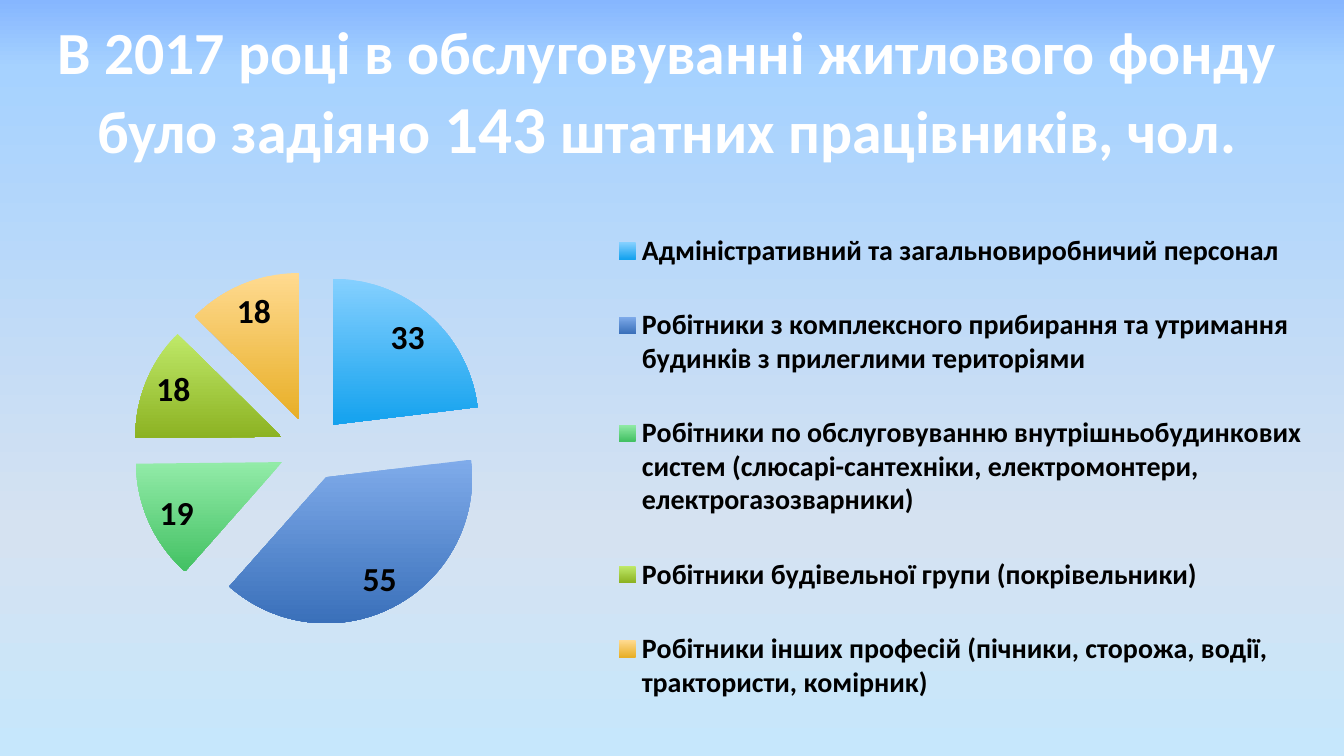
from copy import deepcopy

from pptx import Presentation
from pptx.chart.data import CategoryChartData
from pptx.dml.color import RGBColor
from pptx.enum.chart import XL_CHART_TYPE, XL_LABEL_POSITION, XL_LEGEND_POSITION
from pptx.enum.text import MSO_ANCHOR, PP_ALIGN
from pptx.oxml import parse_xml
from pptx.oxml.ns import nsdecls, qn
from pptx.util import Inches, Pt

PIE = XL_CHART_TYPE.PIE
RIGHT = XL_LEGEND_POSITION.RIGHT
BEST = XL_LABEL_POSITION.BEST_FIT
TOP = MSO_ANCHOR.TOP
CENTER = PP_ALIGN.CENTER

WHITE = RGBColor(0xFF, 0xFF, 0xFF)
BLACK = RGBColor(0, 0, 0)
SKY = [
    (0, RGBColor(0x86, 0xB6, 0xFF)),
    (0.09, RGBColor(0xA6, 0xD2, 0xFF)),
    (0.7, RGBColor(0xD5, 0xE2, 0xF1)),
    (1, RGBColor(0xC6, 0xE7, 0xFC)),
]
AZURE = RGBColor(0x85, 0xD0, 0xFF), RGBColor(0x14, 0xA2, 0xEE)
BLUE = RGBColor(0x7F, 0xAB, 0xEA), RGBColor(0x3A, 0x70, 0xBA)
GREEN = RGBColor(0x92, 0xEB, 0xA8), RGBColor(0x43, 0xC1, 0x63)
LIME = RGBColor(0xBF, 0xE9, 0x69), RGBColor(0x8C, 0xB2, 0x22)
GOLD = RGBColor(0xFF, 0xDA, 0x90), RGBColor(0xE8, 0xAF, 0x27)

STAFF = [
    ("Адміністративний та загальновиробничий персонал", 33, AZURE),
    ("Робітники з комплексного прибирання та утримання будинків "
     "з прилеглими територіями", 55, BLUE),
    ("Робітники по обслуговуванню внутрішньобудинкових систем "
     "(слюсарі-сантехніки, електромонтери, електрогазозварники)", 19, GREEN),
    ("Робітники будівельної групи (покрівельники)", 18, LIME),
    ("Робітники інших професій (пічники, сторожа, водії, "
     "трактористи, комірник)", 18, GOLD),
]


def style(font, size, color=BLACK, bold=True):
    """Set the look of a font."""
    font.name = "Calibri"
    font.size = Pt(size)
    font.bold = bold
    font.color.rgb = color


def write(para, text, **look):
    """Add a run of text with its format."""
    run = para.add_run()
    run.text = text
    style(run.font, **look)


def shade(fill, stops):
    """Colour a gradient from top to bottom through the given stops."""
    fill.gradient_angle = 270
    for stop, (place, color) in zip(fill.gradient_stops, stops):
        stop.position = place
        stop.color.rgb = color


def paint(slide):
    """Give the slide its sky gradient."""
    fill = slide.background.fill
    fill.gradient()
    group = slide.element.find(".//" + qn("a:gsLst"))
    for _ in SKY[2:]:
        group.append(deepcopy(group[0]))
    shade(fill, SKY)


def layout(x, y, w, h, inner=False):
    """Make a manual layout from fractions of the chart."""
    target = '<c:layoutTarget val="inner"/>' if inner else ""
    sizes = "".join(f'<c:{key} val="{val}"/>'
                    for key, val in zip("xywh", (x, y, w, h)))
    return parse_xml(
        f'<c:layout {nsdecls("c")}><c:manualLayout>{target}'
        f'<c:xMode val="edge"/><c:yMode val="edge"/>{sizes}'
        "</c:manualLayout></c:layout>")


def fix(node, spot, index):
    """Put a manual layout into a chart part."""
    for old in node.findall(qn("c:layout")):
        node.remove(old)
    node.insert(index, spot)


def head(slide):
    """Write the slide title."""
    title = slide.shapes.title
    title.left, title.top = Inches(0.12), Inches(0.06)
    title.width, title.height = Inches(9.69), Inches(1.03)
    frame = title.text_frame
    frame.word_wrap = True
    frame.vertical_anchor = TOP
    para = frame.paragraphs[0]
    para.alignment = CENTER
    write(para, "В 2017 році в обслуговуванні житлового фонду було задіяно ",
          size=32, color=WHITE)
    write(para, "143", size=36, color=WHITE)
    write(para, " штатних працівників, чол.", size=32, color=WHITE)


def graph(slide):
    """Draw the pie of staff groups."""
    data = CategoryChartData(number_format="0")
    data.categories = [name for name, _, _ in STAFF]
    data.add_series("Series 1", [count for _, count, _ in STAFF])
    chart = slide.shapes.add_chart(
        PIE, Inches(0.12), Inches(1.13), Inches(9.76), Inches(4.42), data).chart
    chart.has_title = False
    style(chart.font, 18, bold=False)
    chart.has_legend = True
    legend = chart.legend
    legend.position = RIGHT
    legend.include_in_layout = False
    style(legend.font, 15)

    plot = chart.plots[0]
    plot.vary_by_categories = True
    series = plot.series[0]
    labels = series.data_labels
    labels.show_value = True
    labels.show_percentage = False
    labels.number_format = "0"
    labels.number_format_is_linked = False
    labels.position = BEST
    style(labels.font, 18)

    for num, (_, _, pair) in enumerate(STAFF):
        fill = series.points[num].format.fill
        fill.gradient()
        shade(fill, zip((0, 1), pair))
    burst = parse_xml(f'<c:explosion {nsdecls("c")} val="22"/>')
    chart.element.find(".//" + qn("c:dPt")).addprevious(burst)

    area = chart.element.find(".//" + qn("c:plotArea"))
    fix(area, layout(0, 0.2, 0.45, 0.6, inner=True), 0)
    key = chart.element.find(".//" + qn("c:legend"))
    fix(key, layout(0.45, 0.07, 0.54, 0.92), 1)


def main():
    """Build and save the slide."""
    deck = Presentation()
    deck.slide_width = Inches(10)
    deck.slide_height = deck.slide_width * 9 // 16
    slide = deck.slides.add_slide(deck.slide_layouts[5])
    paint(slide)
    head(slide)
    graph(slide)
    deck.save("out.pptx")


if __name__ == "__main__":
    main()
